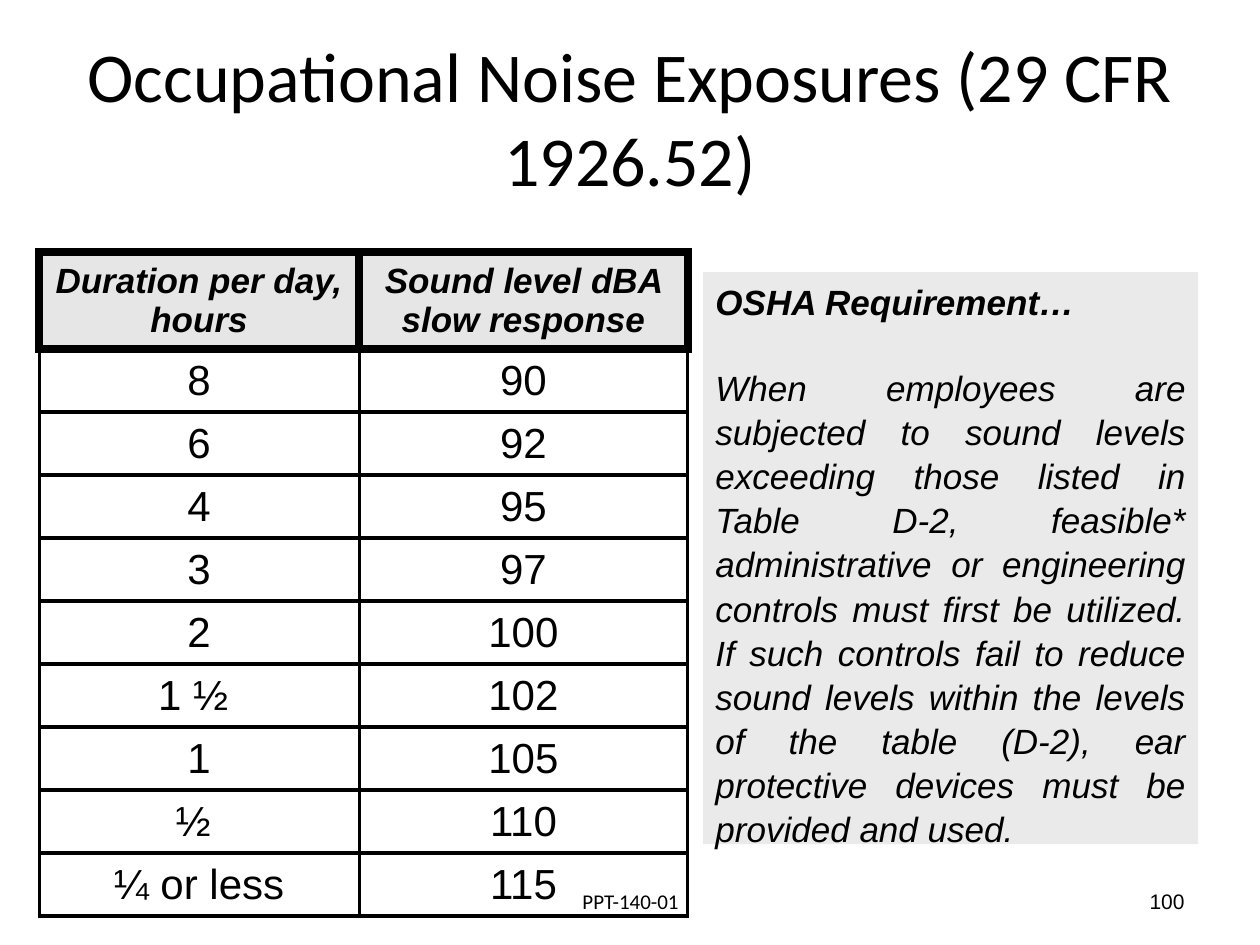
from dataclasses import dataclass

from lxml import etree
from pptx import Presentation
from pptx.dml.color import RGBColor
from pptx.enum.shapes import MSO_SHAPE
from pptx.enum.text import MSO_ANCHOR, MSO_AUTO_SIZE, PP_ALIGN
from pptx.oxml.ns import qn
from pptx.util import Pt

RECT = MSO_SHAPE.RECTANGLE
TOP, MIDDLE = MSO_ANCHOR.TOP, MSO_ANCHOR.MIDDLE
NO_FIT = MSO_AUTO_SIZE.NONE
CENTER, RIGHT, JUSTIFY = PP_ALIGN.CENTER, PP_ALIGN.RIGHT, PP_ALIGN.JUSTIFY
PX = 9144
TITLE_ONLY = 5


@dataclass(frozen=True)
class Theme:
    ink: str = "000000"
    header_fill: str = "E6E6E6"
    panel_fill: str = "EAEAEA"
    heading_font: str = "Calibri"
    body_font: str = "Arial"
    title: int = 40
    cell: int = 24
    text: int = 20
    footer: int = 12
    thick: int = 5
    thin: int = 2


THEME = Theme()

TITLE = "Occupational Noise Exposures (29 CFR 1926.52)"
HEADERS = ("Duration per day, hours", "Sound level dBA slow response")
EXPOSURES = (
    ("8", "90"),
    ("6", "92"),
    ("4", "95"),
    ("3", "97"),
    ("2", "100"),
    ("1 ½ ", "102"),
    ("1", "105"),
    ("½ ", "110"),
    ("¼ or less", "115"),
)
REQUIREMENT_HEADING = "OSHA Requirement…"
REQUIREMENT = (
    "When employees are subjected to sound levels exceeding those listed in "
    "Table D-2, feasible* administrative or engineering controls must first be "
    "utilized. If such controls fail to reduce sound levels within the levels of "
    "the table (D-2), ear protective devices must be provided and used."
)


def emu(*lengths):
    return [n * PX for n in lengths]


def set_attrs(obj, values):
    for name, value in values.items():
        setattr(obj, name, value)


def write(p, text, size, align, font=THEME.body_font, bold=False, italic=False, **spacing):
    set_attrs(p, {"alignment": align, **spacing})
    r = p.add_run()
    r.text = text
    set_attrs(r.font, {"name": font, "size": Pt(size), "bold": bold, "italic": italic})
    r.font.color.rgb = RGBColor.from_string(THEME.ink)


def set_frame(tf, anchor):
    set_attrs(tf, {"word_wrap": True, "auto_size": NO_FIT, "vertical_anchor": anchor})


def set_borders(cell, widths):
    tcPr = cell._tc.get_or_add_tcPr()
    for i, (side, width) in enumerate(widths.items()):
        ln = etree.Element(qn(f"a:ln{side}"), w=str(Pt(width)))
        fill = etree.SubElement(ln, qn("a:solidFill"))
        etree.SubElement(fill, qn("a:srgbClr"), val=THEME.ink)
        tcPr.insert(i, ln)


def add_title(s, box):
    sp = s.shapes.title
    set_attrs(sp, dict(zip(("left", "top", "width", "height"), emu(*box))))
    set_frame(sp.text_frame, MIDDLE)
    write(sp.text_frame.paragraphs[0], TITLE, THEME.title, CENTER, THEME.heading_font)


def add_requirement(s, box):
    sp = s.shapes.add_shape(RECT, *emu(*box))
    sp.shadow.inherit = False
    sp.fill.solid()
    sp.fill.fore_color.rgb = RGBColor.from_string(THEME.panel_fill)
    sp.line.fill.background()
    tf = sp.text_frame
    set_frame(tf, TOP)
    write(tf.paragraphs[0], REQUIREMENT_HEADING, THEME.text, JUSTIFY,
          bold=True, italic=True, line_spacing=1.05, space_after=Pt(24))
    write(tf.add_paragraph(), REQUIREMENT, THEME.text, JUSTIFY,
          italic=True, line_spacing=1.05)


def add_exposure_table(s, box, col_widths, header_height):
    rows = (HEADERS, *EXPOSURES)
    row_height = (box[3] - header_height) // len(EXPOSURES)
    table = s.shapes.add_table(len(rows), len(HEADERS), *emu(*box)).table
    set_attrs(table, {"first_row": False, "horz_banding": False})
    for col, width in zip(table.columns, emu(*col_widths)):
        col.width = width
    for i, values in enumerate(rows):
        header = i == 0
        table.rows[i].height = (header_height if header else row_height) * PX
        edge = THEME.thick if header else THEME.thin
        widths = dict.fromkeys("LRTB", edge)
        if i == 1:
            widths["T"] = THEME.thick
        for j, text in enumerate(values):
            cell = table.cell(i, j)
            cell.vertical_anchor = MIDDLE
            if header:
                cell.fill.solid()
                cell.fill.fore_color.rgb = RGBColor.from_string(THEME.header_fill)
            else:
                cell.fill.background()
            set_borders(cell, widths)
            write(cell.text_frame.paragraphs[0], text,
                  THEME.text if header else THEME.cell, CENTER,
                  bold=header, italic=header)


def add_footer(s, box, text, align, font):
    tf = s.shapes.add_textbox(*emu(*box)).text_frame
    set_frame(tf, MIDDLE)
    write(tf.paragraphs[0], text, THEME.footer, align, font)


def main():
    prs = Presentation()
    prs.slide_width, prs.slide_height = emu(1000, 750)
    s = prs.slides.add_slide(prs.slide_layouts[TITLE_ONLY])
    add_title(s, (50, 30, 900, 125))
    add_footer(s, (717, 695, 233, 40), "100", RIGHT, THEME.body_font)
    add_requirement(s, (558, 216, 393, 454))
    add_exposure_table(s, (31, 200, 515, 527), (254, 261), 77)
    add_footer(s, (342, 695, 317, 40), "PPT-140-01", CENTER, THEME.heading_font)
    prs.save("out.pptx")


if __name__ == "__main__":
    main()
